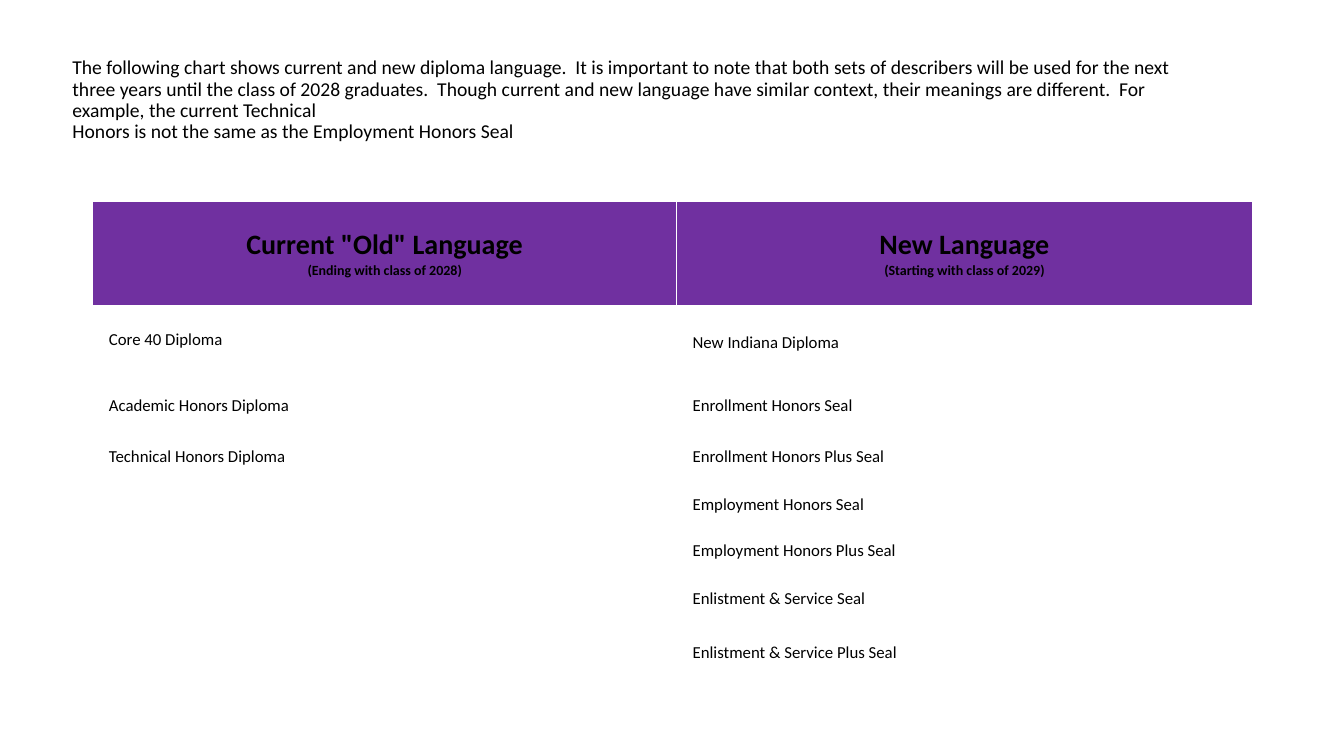
from dataclasses import dataclass
from typing import Any

import lxml.etree
import pptx
import pptx.dml.color
import pptx.enum.text
import pptx.oxml.ns
import pptx.util

EMU_PER_PX = 9144  # 100 px to the inch
FONT = "Calibri"
COLOURS = {"text": "000000", "header": "7030A0", "body": "FFFFFF", "border": "FFFFFF"}
MIDDLE = pptx.enum.text.MSO_ANCHOR.MIDDLE
CENTER = pptx.enum.text.PP_ALIGN.CENTER
LEFT = pptx.enum.text.PP_ALIGN.LEFT

COLUMN_WIDTHS = [579, 571]
ROW_HEIGHTS = [103, 74, 51, 50, 45, 46, 50, 57]
TABLE_LEFT, TABLE_TOP = 92, 200
BORDER_PT = 0.75

INTRO = (
    "The following chart shows current and new diploma language.  It is important to note "
    "that both sets of describers will be used for the next three years until the class of "
    "2028 graduates.  Though current and new language have similar context, their meanings "
    "are different.  For example, the current Technical",
    "Honors is not the same as the Employment Honors Seal",
)


@dataclass(frozen=True)
class Heading:
    title: str
    note: str


@dataclass(frozen=True)
class DiplomaRow:
    new: str
    current: str = ""
    bottom_margin: int = 4


HEADINGS = [
    Heading('Current "Old" Language', "(Ending with class of 2028)"),
    Heading("New Language", "(Starting with class of 2029)"),
]
DIPLOMA_ROWS = [
    DiplomaRow("New Indiana Diploma", "Core 40 Diploma"),
    DiplomaRow("Enrollment Honors Seal", "Academic Honors Diploma"),
    DiplomaRow("Enrollment Honors Plus Seal", "Technical Honors Diploma"),
    DiplomaRow("Employment Honors Seal"),
    DiplomaRow("Employment Honors Plus Seal"),
    DiplomaRow("Enlistment & Service Seal"),
    DiplomaRow("Enlistment & Service Plus Seal"),
]
CORE_40_BOTTOM = 10  # lifts the first current diploma slightly above the row's middle


def px(length: int) -> pptx.util.Emu:
    return pptx.util.Emu(length * EMU_PER_PX)


def rgb(name: str) -> pptx.dml.color.RGBColor:
    return pptx.dml.color.RGBColor.from_string(COLOURS[name])


def apply(target: Any, values: dict[str, Any]) -> None:
    for name, value in values.items():
        setattr(target, name, value)


def add_span(para: Any, text: str, size: int, bold: bool = False) -> None:
    span = para.add_run()
    span.text = text
    apply(span.font, {"name": FONT, "size": pptx.util.Pt(size), "bold": bold})
    span.font.color.rgb = rgb("text")


def add_intro(page: Any) -> None:
    box = page.shapes.add_textbox(px(62), px(27), px(1150), px(145))
    apply(box.text_frame, {"word_wrap": True, "vertical_anchor": MIDDLE})
    para = box.text_frame.paragraphs[0]
    para.line_spacing = 0.9
    for index, line in enumerate(INTRO):
        if index:
            para.add_line_break()
        add_span(para, line, 14)


def add_borders(cell: Any) -> None:
    properties = cell._tc.get_or_add_tcPr()
    qn = pptx.oxml.ns.qn
    for side in ("lnL", "lnR", "lnT", "lnB"):
        width = str(pptx.util.Pt(BORDER_PT))
        line = lxml.etree.SubElement(properties, qn(f"a:{side}"), w=width)
        fill = lxml.etree.SubElement(line, qn("a:solidFill"))
        lxml.etree.SubElement(fill, qn("a:srgbClr"), val=COLOURS["border"])


def format_cell(cell: Any, colour: str, left: int = 9, bottom: int = 4) -> None:
    add_borders(cell)
    cell.fill.solid()
    cell.fill.fore_color.rgb = rgb(colour)
    apply(cell, {
        "vertical_anchor": MIDDLE,
        "margin_left": px(left),
        "margin_right": px(9),
        "margin_top": px(4),
        "margin_bottom": px(bottom),
    })


def fill_heading(cell: Any, heading: Heading) -> None:
    format_cell(cell, "header")
    title = cell.text_frame.paragraphs[0]
    note = cell.text_frame.add_paragraph()
    for para, text, size in ((title, heading.title, 20), (note, heading.note, 10)):
        para.alignment = CENTER
        add_span(para, text, size, bold=True)


def fill_diploma(cell: Any, text: str, bottom: int) -> None:
    format_cell(cell, "body", left=16, bottom=bottom)
    if text:
        para = cell.text_frame.paragraphs[0]
        para.alignment = LEFT
        add_span(para, text, 12)


def add_diploma_table(page: Any) -> None:
    table = page.shapes.add_table(
        len(ROW_HEIGHTS), len(COLUMN_WIDTHS), px(TABLE_LEFT), px(TABLE_TOP),
        px(sum(COLUMN_WIDTHS)), px(sum(ROW_HEIGHTS)),
    ).table
    for column, width in zip(table.columns, COLUMN_WIDTHS):
        column.width = px(width)
    for row, height in zip(table.rows, ROW_HEIGHTS):
        row.height = px(height)
    for index, heading in enumerate(HEADINGS):
        fill_heading(table.cell(0, index), heading)
    for index, diploma in enumerate(DIPLOMA_ROWS, start=1):
        current_bottom = CORE_40_BOTTOM if index == 1 else diploma.bottom_margin
        fill_diploma(table.cell(index, 0), diploma.current, current_bottom)
        fill_diploma(table.cell(index, 1), diploma.new, diploma.bottom_margin)


def main() -> None:
    deck = pptx.Presentation()
    apply(deck, {"slide_width": px(1333), "slide_height": px(750)})
    page = deck.slides.add_slide(deck.slide_layouts[6])
    add_intro(page)
    add_diploma_table(page)
    deck.save("out.pptx")


if __name__ == "__main__":
    main()
